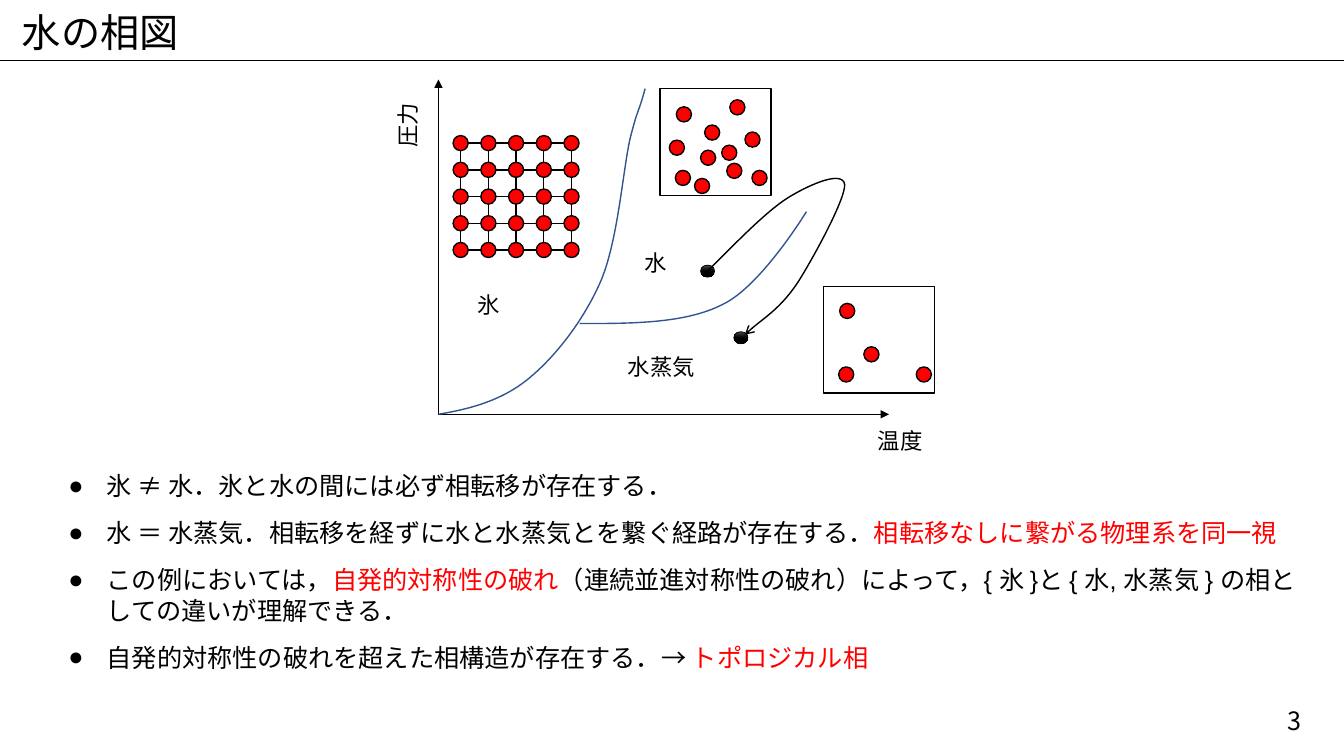
from dataclasses import dataclass

from lxml.etree import SubElement
from pptx import Presentation
from pptx.dml.color import RGBColor
from pptx.enum.shapes import MSO_CONNECTOR as Connector, MSO_SHAPE as Preset
from pptx.enum.text import MSO_AUTO_SIZE as AutoSize
from pptx.oxml.ns import qn
from pptx.util import Inches, Pt

BLACK = RGBColor(0x00, 0x00, 0x00)
GREY = RGBColor(0x4B, 0x4B, 0x4B)
RED = RGBColor(0xFF, 0x00, 0x00)
BLUE = RGBColor(0x32, 0x54, 0x91)
JAPANESE = "Noto Sans CJK JP"
LATIN = "Arial"
SLIDE_W, SLIDE_H = 40 / 3, 7.5
BOX_W, BOX_H = 1.1, 1.06
MOLECULE = 0.15
CELLS = 4

Point = tuple[float, float]


@dataclass(frozen=True)
class Label:
    text: str
    left: float
    top: float
    width: float
    height: float = 0.37
    size: int = 16
    rotation: int = 0


@dataclass(frozen=True)
class Curve:
    """Opposite corners of the frame, then a start point and three points per Bezier segment."""
    top_left: Point
    bottom_right: Point
    points: list[Point]
    color: RGBColor
    arrow: str = ""


@dataclass(frozen=True)
class Phase:
    """A framed box and the top-left corners of its molecules."""
    left: float
    top: float
    molecules: list[Point]


LABELS = [
    Label("3", 12.67, 6.95, 0.5, 0.4, 18),
    Label("水の相図", 0.12, 0.03, 1.77, 0.57, 28),
    Label("温度", 8.61, 4.19, 0.65),
    Label("圧力", 3.72, 1.05, 0.65, rotation=270),
    Label("水蒸気", 6.13, 3.45, 0.88),
    Label("水", 6.3, 2.42, 0.43),
    Label("氷", 4.64, 2.84, 0.43),
]
BOUNDARIES = [
    Curve((5.75, 2.1), (8, 3.21), [
        (5.75, 3.21), (6.27, 3.21), (6.8, 3.21), (7.17, 3.02),
        (7.55, 2.84), (8, 2.1), (8, 2.1)], BLUE),
    Curve((4.35, 0.88), (6.4, 4.11), [
        (4.35, 4.11), (4.65, 4.06), (4.97, 3.98), (5.24, 3.76),
        (5.51, 3.54), (5.79, 3.18), (5.96, 2.79),
        (6.13, 2.39), (6.18, 1.69), (6.25, 1.38),
        (6.33, 1.06), (6.33, 1.14), (6.4, 0.88)], BLUE),
]
DETOUR = Curve((7.03, 1.77), (8.37, 3.32), [
    (7.03, 2.68), (7.32, 2.39), (7.6, 2.1), (7.82, 1.96),
    (8.05, 1.82), (8.36, 1.69), (8.38, 1.83),
    (8.39, 1.97), (8.07, 2.56), (7.91, 2.81),
    (7.74, 3.06), (7.55, 3.17), (7.39, 3.32)], BLACK, "arrow")
DETOUR_ENDS = [(6.95, 2.63), (7.28, 3.29)]
VAPOUR = Phase(8.17, 2.84, [(8.33, 3.01), (8.32, 3.64), (8.57, 3.44), (9.09, 3.64)])
WATER = Phase(6.55, 0.88, [
    (6.71, 1.06), (7.24, 0.99), (6.64, 1.39), (6.7, 1.69), (6.95, 1.49), (7.39, 1.31),
    (7.21, 1.62), (6.99, 1.24), (7.46, 1.69), (7.16, 1.44), (6.89, 1.77)])
ICE_LEFT, ICE_TOP = 4.57, 1.42
ICE_COLUMNS = [ICE_LEFT + BOX_W * i / CELLS for i in range(CELLS + 1)]
ICE_ROWS = [ICE_TOP + BOX_H * i / CELLS for i in range(CELLS + 1)]
ICE = Phase(ICE_LEFT, ICE_TOP, [(x - MOLECULE / 2, y - MOLECULE / 2)
                                for y in reversed(ICE_ROWS) for x in ICE_COLUMNS])
# Each bullet is a list of (text, colour) parts
BULLETS = [
    [("氷 ≠ 水．氷と水の間には必ず相転移が存在する．", BLACK)],
    [("水 ＝ 水蒸気．相転移を経ずに水と水蒸気とを繋ぐ経路が存在する．", BLACK),
     ("相転移なしに繋がる物理系を同一視", RED)],
    [("この例においては，", BLACK), ("自発的対称性の破れ", RED),
     ("（連続並進対称性の破れ）によって，{ 氷 }と { 水, 水蒸気 } の相としての違いが理解できる．", BLACK)],
    [("自発的対称性の破れを超えた相構造が存在する．→ ", BLACK), ("トポロジカル相", RED)],
]

prs = Presentation()
prs.slide_width, prs.slide_height = Inches(SLIDE_W), Inches(SLIDE_H)
slide = prs.slides.add_slide(prs.slide_layouts[6])
shapes = slide.shapes


def set_font(paragraph, name: str, size: int) -> None:
    font = paragraph.font
    font.name, font.size = name, Pt(size)
    font.color.rgb = BLACK
    defaults = paragraph._p.pPr.find(qn("a:defRPr"))
    SubElement(defaults, qn("a:ea"), typeface=JAPANESE)


def set_line(shape, color: RGBColor, width: float, arrow: str = "") -> None:
    shape.line.color.rgb = color
    shape.line.width = Pt(width)
    if arrow:
        SubElement(shape.line._get_or_add_ln(), qn("a:tailEnd"), type=arrow)


def add_label(label: Label) -> None:
    box = shapes.add_textbox(*map(Inches, (label.left, label.top, label.width, label.height)))
    box.rotation = label.rotation
    frame = box.text_frame
    frame.word_wrap = False
    frame.auto_size = AutoSize.SHAPE_TO_FIT_TEXT
    frame.text = label.text
    set_font(frame.paragraphs[0], JAPANESE, label.size)


def add_line(start: Point, end: Point, width: float, arrow: str = ""):
    line = shapes.add_connector(Connector.STRAIGHT, *map(Inches, (*start, *end)))
    set_line(line, BLACK, width, arrow)
    SubElement(line._element.spPr, qn("a:effectLst"))
    return line


def add_outline(preset: Preset, left: float, top: float, width: float, height: float,
                line_width: float = 1):
    shape = shapes.add_shape(preset, *map(Inches, (left, top, width, height)))
    shape.shadow.inherit = False
    shape.fill.background()
    set_line(shape, BLACK, line_width)
    return shape


def add_curve(curve: Curve) -> None:
    left, top = map(Inches, curve.top_left)
    builder = shapes.build_freeform(left, top)
    builder.add_line_segments([tuple(map(Inches, curve.bottom_right))], close=False)
    shape = builder.convert_to_shape()
    shape.shadow.inherit = False
    shape.fill.background()
    set_line(shape, curve.color, 1, curve.arrow)
    # Bend the straight outline into cubic segments within its frame
    outline = next(shape._element.iter(qn("a:path")))
    for segment in list(outline):
        outline.remove(segment)
    points = curve.points
    segments = [points[i:i + 3] for i in range(1, len(points), 3)]
    for tag, targets in [("a:moveTo", points[:1])] + [("a:cubicBezTo", s) for s in segments]:
        segment = SubElement(outline, qn(tag))
        for x, y in targets:
            SubElement(segment, qn("a:pt"), x=str(Inches(x) - left), y=str(Inches(y) - top))


def add_molecules(phase: Phase) -> None:
    for left, top in phase.molecules:
        molecule = add_outline(Preset.OVAL, left, top, MOLECULE, MOLECULE)
        molecule.fill.solid()
        molecule.fill.fore_color.rgb = RED


def add_frame(phase: Phase):
    return add_outline(Preset.RECTANGLE, phase.left, phase.top, BOX_W, BOX_H)


# Labels, title rule and axes
for label in LABELS:
    add_label(label)
add_line((0, 0.6), (SLIDE_W, 0.6), 0.5)
for axis_end in ((8.82, 4.11), (4.35, 0.79)):
    add_line((4.35, 4.11), axis_end, 0.5, "triangle")

# Phase boundaries
for boundary in BOUNDARIES:
    add_curve(boundary)

# Vapour and water
for phase in (VAPOUR, WATER):
    add_frame(phase)
    add_molecules(phase)

# Ice lattice, its middle lines joined to the frame
lattice = add_frame(ICE)
for i in range(1, CELLS):
    x, y = ICE_COLUMNS[i], ICE_ROWS[i]
    row = add_line((ICE_LEFT, y), (ICE_LEFT + BOX_W, y), 1)
    column = add_line((x, ICE_TOP), (x, ICE_TOP + BOX_H), 1)
    if i == CELLS // 2:
        for line, first, last in ((row, 1, 3), (column, 0, 2)):
            line.begin_connect(lattice, first)
            line.end_connect(lattice, last)
add_molecules(ICE)

# Route from water to vapour
for left, top in DETOUR_ENDS:
    state = add_outline(Preset.OVAL, left, top, 0.14, 0.12, 0.5)
    state.fill.gradient()
    state.fill.gradient_angle = 270
    for stop, color, position in zip(state.fill.gradient_stops, (GREY, BLACK), (0, 0.5)):
        stop.color.rgb = color
        stop.position = position
add_curve(DETOUR)

# Bulleted conclusions
conclusions = shapes.add_textbox(*map(Inches, (0.58, 4.62, 12.54, 2.12))).text_frame
conclusions.word_wrap = True
conclusions.auto_size = AutoSize.SHAPE_TO_FIT_TEXT
for i, parts in enumerate(BULLETS):
    paragraph = conclusions.add_paragraph() if i else conclusions.paragraphs[0]
    paragraph.space_before = Pt(12)
    properties = paragraph._p.get_or_add_pPr()
    properties.set("marL", str(Inches(0.38)))
    properties.set("indent", str(-Inches(0.38)))
    SubElement(properties, qn("a:buFont"), typeface=LATIN)
    SubElement(properties, qn("a:buChar"), char="●")
    set_font(paragraph, LATIN, 18)
    for text, color in parts:
        run = paragraph.add_run()
        run.text = text
        run.font.color.rgb = color

prs.save("out.pptx")
